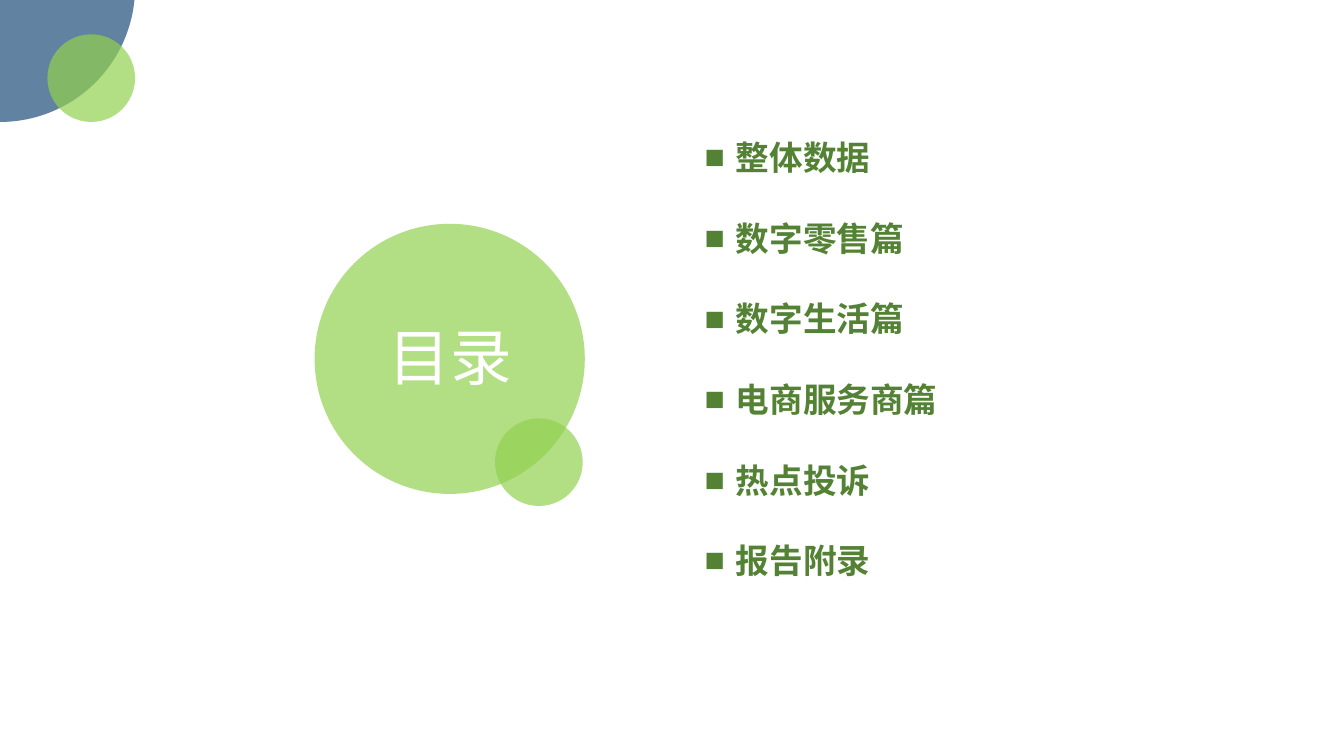
from dataclasses import dataclass

from pptx import Presentation
from pptx.dml.color import RGBColor
from pptx.enum.shapes import MSO_SHAPE
from pptx.enum.text import MSO_ANCHOR, MSO_AUTO_SIZE, PP_ALIGN
from pptx.oxml.ns import qn
from pptx.shapes.autoshape import Shape
from pptx.slide import Slide
from pptx.util import Inches, Pt
from lxml import etree

OVAL = MSO_SHAPE.OVAL
TOP = MSO_ANCHOR.TOP
NO_AUTOFIT = MSO_AUTO_SIZE.NONE
LEFT, CENTER = PP_ALIGN.LEFT, PP_ALIGN.CENTER

LIME = RGBColor(0x92, 0xD0, 0x50)
NAVY = RGBColor(0x1F, 0x4E, 0x79)
GREEN = RGBColor(0x54, 0x82, 0x35)
WHITE = RGBColor(0xFF, 0xFF, 0xFF)
FONT = "Noto Sans CJK SC"
BULLET_FONT = "Arial"
BULLET_INDENT = Inches(0.31)
OPACITY_PERCENT = 70
BIG, SMALL = 2.68, 0.87


@dataclass(frozen=True)
class Circle:
    left: float
    top: float
    diameter: float
    color: RGBColor


TITLE_CIRCLES = [Circle(3.12, 2.22, BIG, LIME), Circle(4.91, 4.15, SMALL, LIME)]
CORNER_CIRCLES = [Circle(-1.34, -1.47, BIG, NAVY), Circle(0.47, 0.34, SMALL, LIME)]
CHAPTERS = ["整体数据", "数字零售篇", "数字生活篇", "电商服务商篇", "热点投诉", "报告附录"]


def draw_circle(page: Slide, circle: Circle) -> None:
    size = Inches(circle.diameter)
    shape = page.shapes.add_shape(
        OVAL, Inches(circle.left), Inches(circle.top), size, size)
    shape.shadow.inherit = False
    shape.line.fill.background()
    shape.fill.solid()
    shape.fill.fore_color.rgb = circle.color
    color = shape.fill._xPr.find(qn("a:solidFill"))[0]
    etree.SubElement(color, qn("a:alpha"), val=str(OPACITY_PERCENT * 1000))


def add_bullet(para) -> None:
    properties = para._p.get_or_add_pPr()
    properties.set("marL", str(BULLET_INDENT))
    properties.set("indent", str(-BULLET_INDENT))
    etree.SubElement(properties, qn("a:buFont"), typeface=BULLET_FONT)
    etree.SubElement(properties, qn("a:buChar"), char="■")


def write_lines(box: Shape, lines: list[str], *, size: float, color: RGBColor,
                bold: bool, align: PP_ALIGN, line_height: float,
                top_margin: float, bulleted: bool = False) -> None:
    frame = box.text_frame
    frame.word_wrap = True
    frame.auto_size = NO_AUTOFIT
    frame.vertical_anchor = TOP
    frame.margin_top = Inches(top_margin)
    for index, text in enumerate(lines):
        para = frame.paragraphs[0] if index == 0 else frame.add_paragraph()
        para.alignment = align
        if bulleted:
            add_bullet(para)
        para.line_spacing = Pt(line_height)
        para.space_before = Pt(0)
        span = para.add_run()
        span.text = text
        span.font.name = FONT
        span.font.size = Pt(size)
        span.font.bold = bold
        span.font.color.rgb = color
        latin = span.font._element.find(qn("a:latin"))
        latin.addnext(latin.makeelement(qn("a:ea"), {"typeface": FONT}))


def draw_title(page: Slide) -> None:
    """Place the title in front of everything drawn so far."""
    title = page.shapes.title
    title.left, title.top = Inches(2.3), Inches(2.33)
    title.width, title.height = Inches(4.33), Inches(1.69)
    write_lines(title, ["目录"], size=44, color=WHITE, bold=False, align=CENTER,
                line_height=60, top_margin=0.73)
    page.shapes[-1]._element.addnext(title._element)


def draw_chapters(page: Slide) -> None:
    box = page.shapes.add_textbox(
        Inches(6.89), Inches(0.48), Inches(6.41), Inches(6.16))
    write_lines(box, CHAPTERS, size=24, color=GREEN, bold=True, align=LEFT,
                line_height=57.6, top_margin=0.48, bulleted=True)


def main() -> None:
    deck = Presentation()
    deck.slide_width, deck.slide_height = Inches(13.33), Inches(7.5)
    page = deck.slides.add_slide(deck.slide_layouts.get_by_name("Title Only"))
    for circle in TITLE_CIRCLES:
        draw_circle(page, circle)
    draw_title(page)
    draw_chapters(page)
    for circle in CORNER_CIRCLES:
        draw_circle(page, circle)
    deck.save("out.pptx")


if __name__ == "__main__":
    main()
